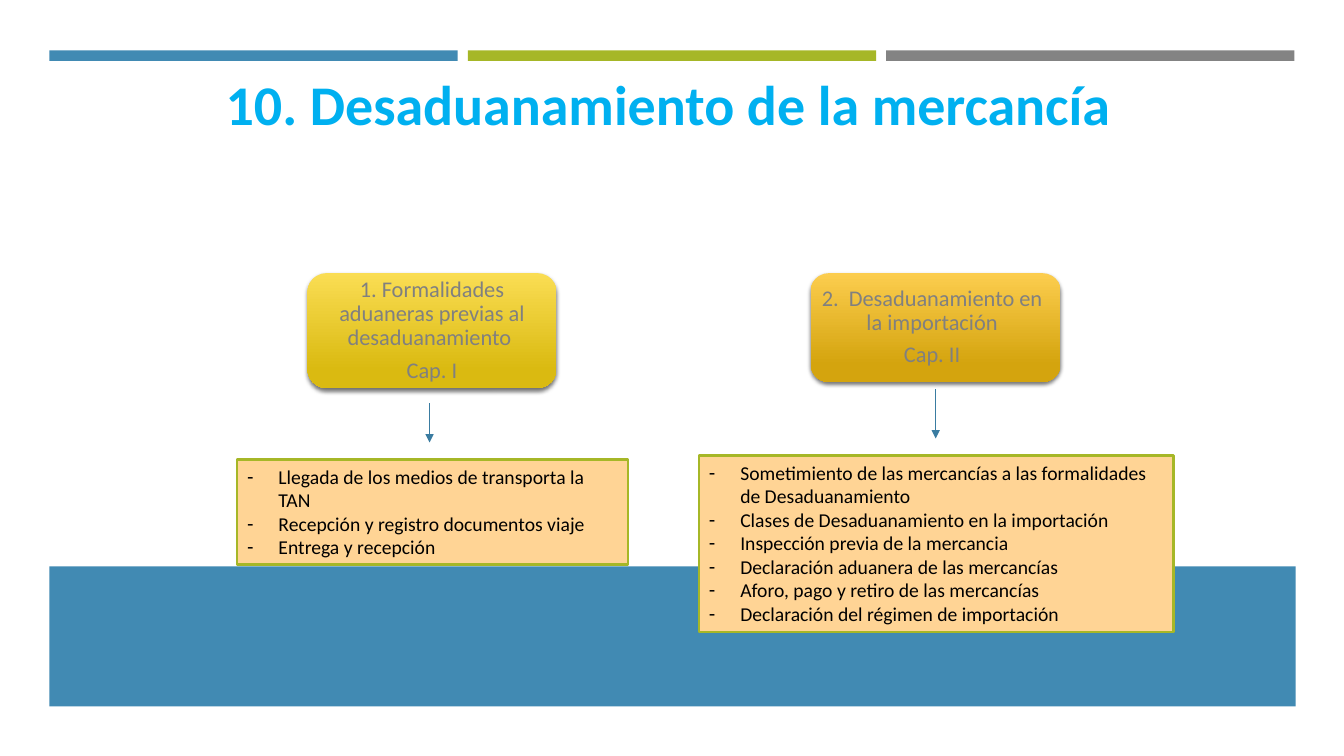
from dataclasses import dataclass

from lxml import etree
from pptx import Presentation
from pptx.dml.color import RGBColor
from pptx.enum.shapes import MSO_CONNECTOR, MSO_SHAPE
from pptx.enum.text import MSO_ANCHOR, MSO_AUTO_SIZE, PP_ALIGN
from pptx.oxml.ns import qn
from pptx.util import Inches, Pt

RECT = MSO_SHAPE.RECTANGLE
ROUND = MSO_SHAPE.ROUNDED_RECTANGLE
LINE = MSO_CONNECTOR.STRAIGHT
TOP = MSO_ANCHOR.TOP
MIDDLE = MSO_ANCHOR.MIDDLE
CENTER = PP_ALIGN.CENTER
LEFT = PP_ALIGN.LEFT
FIXED = MSO_AUTO_SIZE.NONE

FONT = "Calibri"
WIDE = Inches(13.33)
HIGH = Inches(7.5)
COLORS = {
    "blue": "418AB3", "green": "A6B727", "gray": "838383",
    "title": "00B0F0", "label": "808080", "ink": "000000",
    "peach": "FFD495", "arrow": "3A7CA1",
    "lemon": "FADD53", "olive": "DABA11",
    "amber": "FCCD4E", "ochre": "D4A40E",
}


@dataclass
class Box:
    x: float
    y: float
    w: float
    h: float


@dataclass
class Card:
    box: Box
    fade: tuple[str, str]
    pad: float
    lines: list[str]


@dataclass
class Arrow:
    x: float
    top: float
    end: float


@dataclass
class Topic:
    card: Card
    arrow: Arrow
    box: Box
    items: list[str]


MARGIN = 3.68
BAR_W = 30.38
PITCH = 31.13
BARS = ["blue", "green", "gray"]
BAND = Box(MARGIN, 74.93, 92.72, 18.53)
HEAD = Box(14.33, 8.53, 70.74, 19.33)
TOPICS = [
    Topic(
        Card(Box(22.88, 36.13, 18.53, 15.2), ("lemon", "olive"), 0.3,
             ["1. Formalidades aduaneras previas al desaduanamiento ", "Cap. I"]),
        Arrow(31.96, 53.33, 58.53),
        Box(17.63, 60.8, 29.11, 13.87),
        ["Llegada de los medios de transporta la TAN",
         "Recepción y registro documentos viaje",
         "Entrega y recepción"],
    ),
    Topic(
        Card(Box(60.32, 36.13, 18.6, 14.4), ("amber", "ochre"), 0.83,
             ["2.  Desaduanamiento en la importación", "Cap. II"]),
        Arrow(69.62, 51.47, 58),
        Box(51.99, 60.27, 35.33, 23.33),
        ["Sometimiento de las mercancías a las formalidades de Desaduanamiento",
         "Clases de Desaduanamiento en la importación",
         "Inspección previa de la mercancia",
         "Declaración aduanera de las mercancías",
         "Aforo, pago y retiro de las mercancías",
         "Declaración del régimen de importación"],
    ),
]


def rgb(name: str) -> RGBColor:
    return RGBColor.from_string(COLORS[name])


def across(share: float) -> int:
    return round(WIDE * share / 100)


def down(share: float) -> int:
    return round(HIGH * share / 100)


def frame(box: Box) -> tuple[int, int, int, int]:
    return across(box.x), down(box.y), across(box.w), down(box.h)


def place(shape, box: Box) -> None:
    shape.left, shape.top, shape.width, shape.height = frame(box)


def write(shape, lines: list[str], size: float, color: str, align, anchor,
          bold: bool = False) -> list:
    text = shape.text_frame
    text.word_wrap = True
    text.auto_size = FIXED
    text.vertical_anchor = anchor
    for i, line in enumerate(lines):
        para = text.add_paragraph() if i else text.paragraphs[0]
        para.alignment = align
        para.space_before = Pt(0)
        run = para.add_run()
        run.text = line
        run.font.name = FONT
        run.font.size = Pt(size)
        run.font.bold = bold
        run.font.color.rgb = rgb(color)
    return list(text.paragraphs)


def draw_strip(slide, box: Box, color: str) -> None:
    strip = slide.shapes.add_shape(RECT, *frame(box))
    strip.shadow.inherit = False
    strip.fill.solid()
    strip.fill.fore_color.rgb = rgb(color)
    strip.line.fill.background()
    node = strip._element
    node.getparent().insert(2, node)


def draw_card(slide, card: Card) -> None:
    shape = slide.shapes.add_shape(ROUND, *frame(card.box))
    shape.line.fill.background()
    shape.fill.gradient()
    shape.fill.gradient_angle = 270
    for stop, color, spot in zip(shape.fill.gradient_stops, card.fade, (0, 0.84)):
        stop.color.rgb = rgb(color)
        stop.position = spot
    shape.shadow.inherit = False
    glow = shape._element.spPr.find(qn("a:effectLst"))
    shade = etree.SubElement(glow, qn("a:outerShdw"), blurRad=str(Pt(3)),
                             dist=str(Pt(2)), dir="5400000", rotWithShape="0")
    tone = etree.SubElement(shade, qn("a:srgbClr"), val=COLORS["ink"])
    etree.SubElement(tone, qn("a:alpha"), val="55000")
    text = shape.text_frame
    text.margin_left = text.margin_top = text.margin_bottom = across(0.3)
    text.margin_right = across(card.pad)
    for para in write(shape, card.lines, 16, "label", CENTER, MIDDLE):
        para.line_spacing = 0.9
        para.space_after = Pt(5.6)


def draw_arrow(slide, arrow: Arrow) -> None:
    x = across(arrow.x)
    link = slide.shapes.add_connector(LINE, x, down(arrow.top), x, down(arrow.end))
    link.line.color.rgb = rgb("arrow")
    link.line.width = Pt(1)
    props = link._element.spPr
    etree.SubElement(props.find(qn("a:ln")), qn("a:tailEnd"), type="triangle")
    etree.SubElement(props, qn("a:effectLst"))


def fill_list(holder, topic: Topic) -> None:
    place(holder, topic.box)
    holder.fill.solid()
    holder.fill.fore_color.rgb = rgb("peach")
    holder.line.color.rgb = rgb("green")
    holder.line.width = Pt(1.75)
    dent = across(2.34)
    for para in write(holder, topic.items, 14, "ink", LEFT, TOP):
        props = para._p.get_or_add_pPr()
        props.set("marL", str(dent))
        props.set("indent", str(-dent))
        etree.SubElement(props, qn("a:buChar"), char="-")


def main() -> None:
    deck = Presentation()
    deck.slide_width, deck.slide_height = WIDE, HIGH
    slide = deck.slides.add_slide(deck.slide_layouts[3])
    title, *bodies = slide.placeholders
    place(title, HEAD)
    write(title, ["10. Desaduanamiento de la mercancía"], 40, "title", CENTER, TOP, True)
    for i, color in enumerate(BARS):
        draw_strip(slide, Box(MARGIN + i * PITCH, 6.67, BAR_W, 1.4), color)
    draw_strip(slide, BAND, "blue")
    for holder, topic in zip(bodies, TOPICS):
        draw_card(slide, topic.card)
        draw_arrow(slide, topic.arrow)
        fill_list(holder, topic)
    deck.save("out.pptx")


if __name__ == "__main__":
    main()
